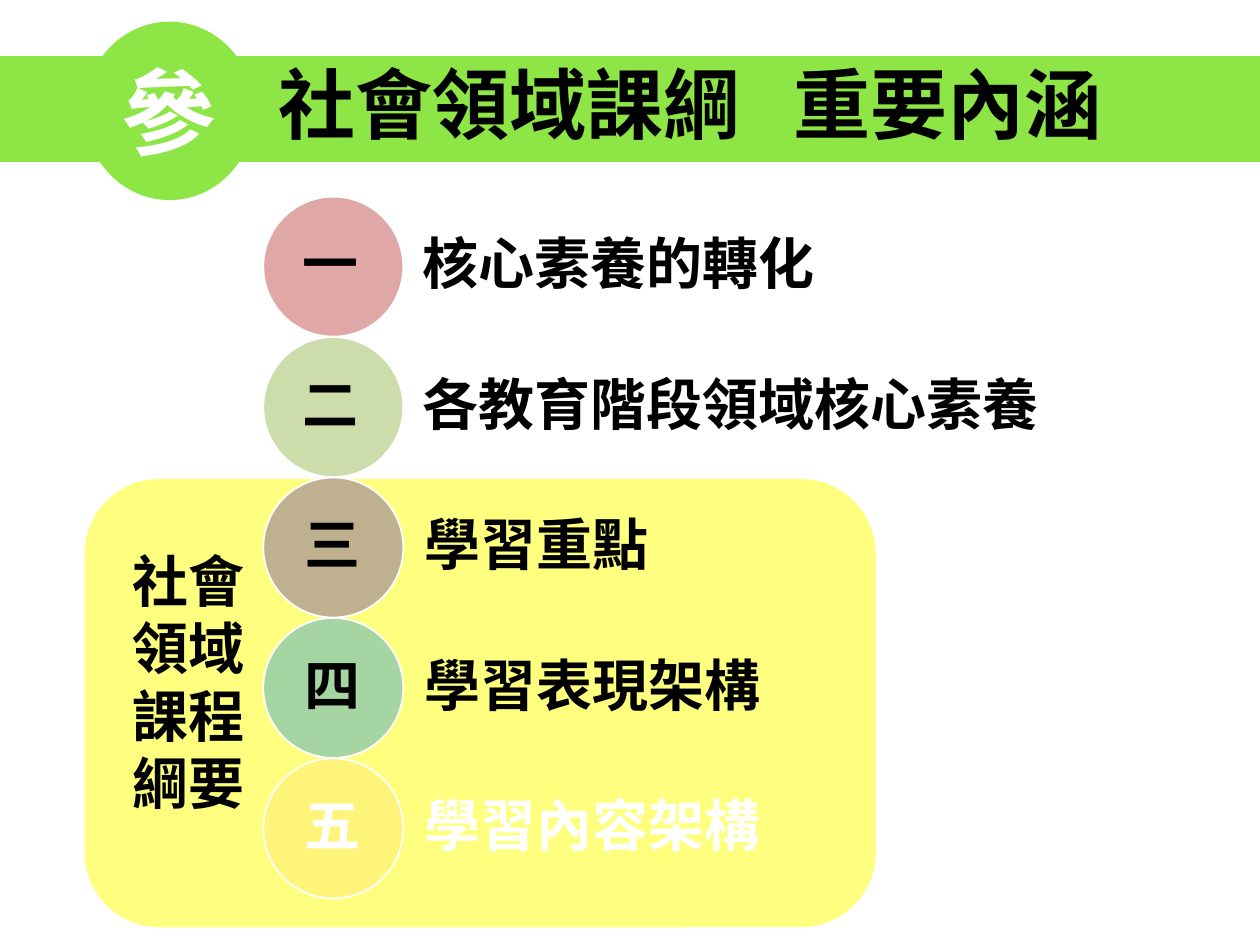
from lxml.etree import SubElement
from pptx import Presentation
from pptx.dml.color import RGBColor
from pptx.enum.shapes import MSO_SHAPE as SHAPE
from pptx.enum.text import MSO_ANCHOR as ANCHOR, PP_ALIGN as ALIGN
from pptx.oxml.ns import qn
from pptx.util import Pt

# Content
TITLE = "社會領域課綱\t重要內涵"
BADGE = "參"
SIDE_LABEL = ["社會", "領域", "課程", "綱要"]
# number, label, circle colour, opacity %, text colour, text left
ITEMS = [
    ("一", "核心素養的轉化", "red", 50, "black", 172.8),
    ("二", "各教育階段領域核心素養", "olive", 50, "black", 172.8),
    ("三", "學習重點", "purple", 50, "black", 174.2),
    ("四", "學習表現架構", "aqua", 50, "black", 174.2),
    ("五", "學習內容架構", "orange", 10, "white", 174.2),
]
COLORS = {
    "black": "000000", "white": "FFFFFF", "green": "8DE646", "yellow": "FFFF00",
    "red": "C0504D", "olive": "9BBB59", "purple": "8064A2", "aqua": "4BACC6",
    "orange": "F79646",
}
SERIF, SANS = "Times New Roman", "Noto Sans CJK SC"
CIRCLE_LEFT, CIRCLE_TOP, CIRCLE, PITCH = 150.5, 112.4, 80, 80.25


def color(name):
    return RGBColor.from_string(COLORS[name])


def set_fill(sp, name, opacity=100):
    sp.fill.solid()
    sp.fill.fore_color.rgb = color(name)
    if opacity < 100:
        clr = sp.fill._xPr.find(qn("a:solidFill"))[0]
        SubElement(clr, qn("a:alpha"), val=str(opacity * 1000))


def add_shape(kind, box, fill, opacity=100, line=None):
    sp = slide.shapes.add_shape(kind, *map(Pt, box))
    sp.shadow.inherit = False
    set_fill(sp, fill, opacity)
    if line:
        sp.line.color.rgb = color(line)
        sp.line.width = Pt(1)
    else:
        sp.line.fill.background()
    return sp


def set_margins(tf, left, top, right, bottom):
    tf.margin_left, tf.margin_top = Pt(left), Pt(top)
    tf.margin_right, tf.margin_bottom = Pt(right), Pt(bottom)


def add_tab(p, pos):
    tabs = SubElement(p._p.get_or_add_pPr(), qn("a:tabLst"))
    SubElement(tabs, qn("a:tab"), pos=str(Pt(pos)), algn="l")


def set_font(p, size, name, font=SERIF):
    p.font.size, p.font.name, p.font.bold = Pt(size), font, True
    p.font.color.rgb = color(name)


prs = Presentation()
prs.slide_width, prs.slide_height = Pt(720), Pt(540)
slide = prs.slides.add_slide(prs.slide_layouts[5])

# Yellow panel behind the last three items
add_shape(SHAPE.ROUNDED_RECTANGLE, (48.4, 273.7, 452, 256.2), "yellow", 50)

# Title band, kept above the panel
title = slide.shapes.title
title.left, title.top, title.width, title.height = map(Pt, (0, 32, 720, 60.5))
set_fill(title, "green")
tf = title.text_frame
set_margins(tf, 159, 3.6, 7.2, 3.6)
tf.vertical_anchor = ANCHOR.MIDDLE
tf.text = TITLE
p = tf.paragraphs[0]
p.alignment, p.line_spacing = ALIGN.LEFT, 0.9
add_tab(p, 294.5)
set_font(p, 44, "black")

# Round badge on the band
badge = add_shape(SHAPE.OVAL, (48.4, 12.4, 97, 102), "green")
tf = badge.text_frame
tf.word_wrap = False
tf.text = BADGE
set_font(tf.paragraphs[0], 54, "white", SANS)

# Numbered circles and their labels
for i, (number, label, fill, opacity, ink, left) in enumerate(ITEMS):
    top = CIRCLE_TOP + i * PITCH
    add_shape(SHAPE.OVAL, (CIRCLE_LEFT, top, CIRCLE, CIRCLE), fill, opacity, "white")
    tf = slide.shapes.add_textbox(Pt(left), Pt(top), Pt(428.4), Pt(CIRCLE)).text_frame
    tf.word_wrap = True
    tf.vertical_anchor = ANCHOR.MIDDLE
    set_margins(tf, 0, 2.9, 0, 2.9)
    tf.text = f"{number}\t{label}"
    p = tf.paragraphs[0]
    p.line_spacing = 0.9
    add_tab(p, 68.5)
    set_font(p, 32, ink)

# Side label, one word a line
tf = slide.shapes.add_textbox(Pt(68.4), Pt(308.9), Pt(79.2), Pt(162.7)).text_frame
tf.word_wrap = False
tf.text = "\n".join(SIDE_LABEL)
for p in tf.paragraphs:
    set_font(p, 32, "black", SANS)

prs.save("out.pptx")
